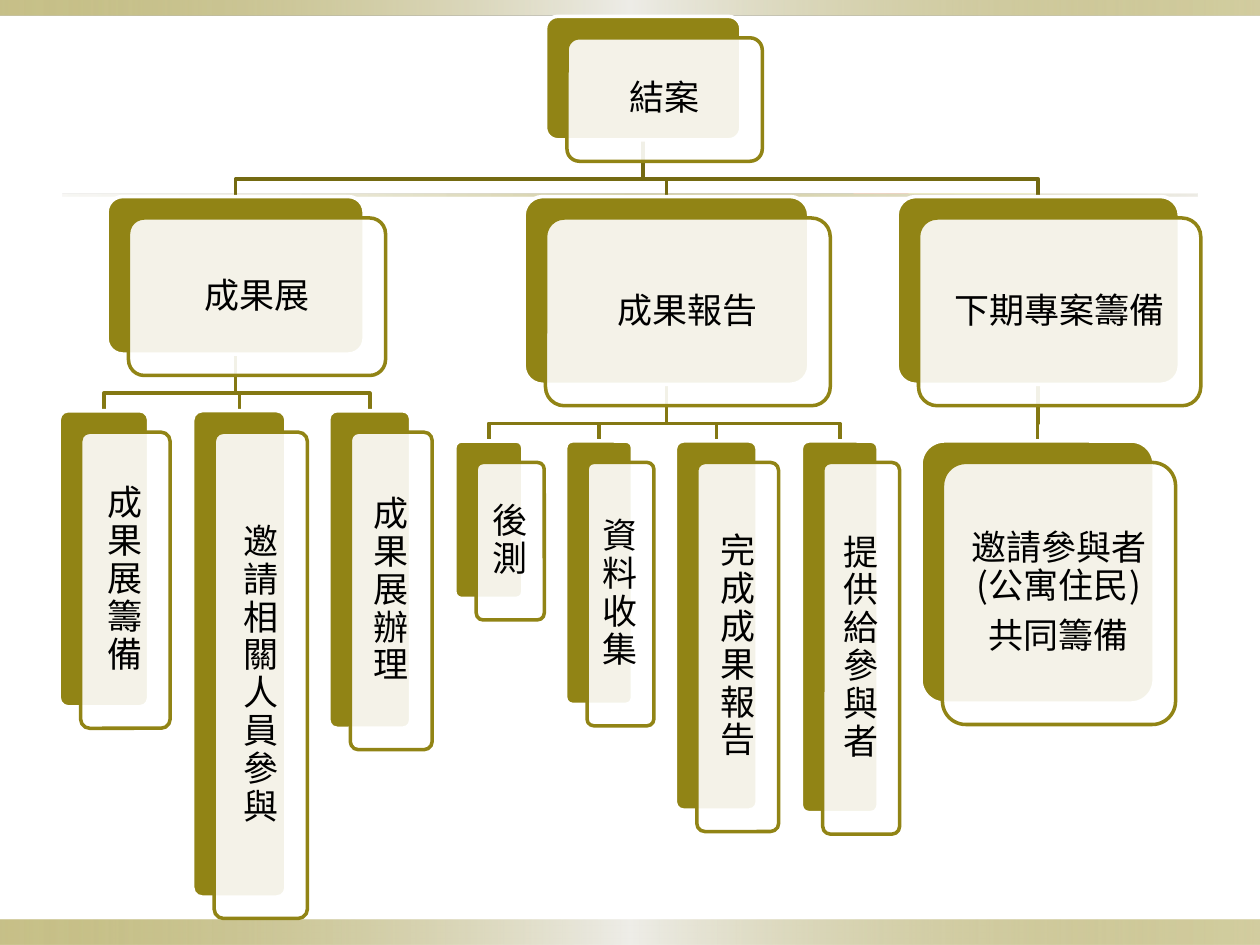
import dataclasses

import lxml.etree
import pptx
import pptx.dml.color
import pptx.enum.shapes
import pptx.enum.text
import pptx.oxml.ns
import pptx.util

COLUMNS, ROWS = 1000, 750
CELL = pptx.util.Inches(10) // COLUMNS
LEVEL_GAP, BAR_DROP, CARD_OFFSET = 45, 31, 17
CORNER = 0.1
CORNER_INSET = 0.029
OLIVE, WHITE, BLACK = "918415", "FFFFFF", "000000"
LEVEL_LINES = ["746A11", "847813"]
BAND_STOPS = [(0, OLIVE, 50), (50, "EEEDE8", 100), (100, OLIVE, 40)]
RULE_STOPS = [(0, "DCD9CC", 20), (50, OLIVE, 40), (100, "DCD9CC", 50)]

FRAME_FORMAT = {
    "word_wrap": True,
    "vertical_anchor": pptx.enum.text.MSO_ANCHOR.MIDDLE,
    **{f"margin_{side}": pptx.util.Inches(0.08) for side in ("left", "top", "right", "bottom")},
}
PARAGRAPH_FORMAT = {
    "alignment": pptx.enum.text.PP_ALIGN.CENTER,
    "line_spacing": 0.9,
    "space_after": pptx.util.Pt(7),
}
FONT_FORMAT = {"size": pptx.util.Pt(20), "name": "Noto Sans CJK SC"}


@dataclasses.dataclass
class Node:
    text: str
    left: int
    width: int
    height: int
    children: tuple = ()

    @property
    def center(self):
        return self.left + self.width / 2


TREE = Node("結案", 433, 155, 98, (
    Node("成果展", 85, 204, 125, (
        Node("成果展籌備", 47, 71, 235),
        Node("邀請相關人員參與", 153, 74, 386),
        Node("成果展辦理", 261, 65, 252),
    )),
    Node("成果報告", 416, 226, 149, (
        Node("後測", 361, 54, 125),
        Node("資料收集", 449, 53, 209),
        Node("完成成果報告", 536, 65, 293),
        Node("提供給參與者", 636, 61, 295),
    )),
    Node("下期專案籌備", 712, 224, 149, (
        Node("邀請參與者(公寓住民)\n共同籌備", 731, 185, 208),
    )),
))


def rgb(value):
    return pptx.dml.color.RGBColor.from_string(value)


def grid(*lengths):
    return [pptx.util.Emu(round(length * CELL)) for length in lengths]


def apply_format(target, values):
    for name, value in values.items():
        setattr(target, name, value)


def add_alpha(color, percent):
    lxml.etree.SubElement(color, pptx.oxml.ns.qn("a:alpha"), val=str(percent * 1000))


def set_line(shape, color):
    shape.line.color.rgb = rgb(color)
    shape.line.width = pptx.util.Pt(2)


def add_gradient_band(slide, box, stops):
    qn = pptx.oxml.ns.qn
    band = slide.shapes.add_shape(pptx.enum.shapes.MSO_SHAPE.RECTANGLE, *grid(*box))
    band.shadow.inherit = False
    band.line.fill.background()
    band.fill.gradient()
    band.fill.gradient_angle = 0
    stop_list = next(band._element.spPr.iter(qn("a:gsLst")))
    for old_stop in list(stop_list):
        stop_list.remove(old_stop)
    for position, color, opacity in stops:
        stop = lxml.etree.SubElement(stop_list, qn("a:gs"), pos=str(position * 1000))
        add_alpha(lxml.etree.SubElement(stop, qn("a:srgbClr"), val=color), opacity)


def add_card(group, box, fill, line, opacity=100):
    card = group.shapes.add_shape(pptx.enum.shapes.MSO_SHAPE.ROUNDED_RECTANGLE, *grid(*box))
    card.adjustments[0] = CORNER
    card.shadow.inherit = False
    card.fill.solid()
    card.fill.fore_color.rgb = rgb(fill)
    add_alpha(next(card._element.spPr.iter(pptx.oxml.ns.qn("a:srgbClr"))), opacity)
    set_line(card, line)


def add_label(group, text, box):
    frame = group.shapes.add_textbox(*grid(*box)).text_frame
    apply_format(frame, FRAME_FORMAT)
    frame.text = text
    for paragraph in frame.paragraphs:
        apply_format(paragraph, PARAGRAPH_FORMAT)
        for run in paragraph.runs:
            apply_format(run.font, FONT_FORMAT)
            run.font.color.rgb = rgb(BLACK)


def add_branch(group, parent, child, top, color):
    bar = top + BAR_DROP
    points = [(parent.center, top), (parent.center, bar),
              (child.center, bar), (child.center, top + LEVEL_GAP)]
    start, *corners = [grid(*point) for point in points]
    builder = group.shapes.build_freeform(*start)
    builder.add_line_segments(corners, close=False)
    branch = builder.convert_to_shape()
    branch.shadow.inherit = False
    branch.fill.background()
    set_line(branch, color)


def add_branches(group, node, top, level=0):
    bottom = top + node.height
    for child in node.children:
        add_branches(group, child, bottom + LEVEL_GAP, level + 1)
        add_branch(group, node, child, bottom, LEVEL_LINES[level])


def add_nodes(group, node, top):
    width, height = node.width, node.height
    left, front_top = node.left + CARD_OFFSET, top + CARD_OFFSET
    inset = CORNER_INSET * min(width, height)
    add_card(group, (node.left, top, width, height), OLIVE, WHITE)
    add_card(group, (left, front_top, width, height), WHITE, OLIVE, 90)
    add_label(group, node.text,
              (left + inset, front_top + inset, width - 2 * inset, height - 2 * inset))
    for child in node.children:
        add_nodes(group, child, top + height + LEVEL_GAP)


def main():
    presentation = pptx.Presentation()
    presentation.slide_width, presentation.slide_height = grid(COLUMNS, ROWS)
    slide = presentation.slides.add_slide(presentation.slide_layouts[6])
    add_gradient_band(slide, (0, ROWS - 20, COLUMNS, 20), BAND_STOPS)
    add_gradient_band(slide, (0, 0, COLUMNS, 12), BAND_STOPS)
    add_gradient_band(slide, (50, 154, COLUMNS - 100, 2), RULE_STOPS)
    hierarchy = slide.shapes.add_group_shape()
    add_branches(hierarchy, TREE, 13)
    add_nodes(hierarchy, TREE, 13)
    presentation.save("out.pptx")


if __name__ == "__main__":
    main()
